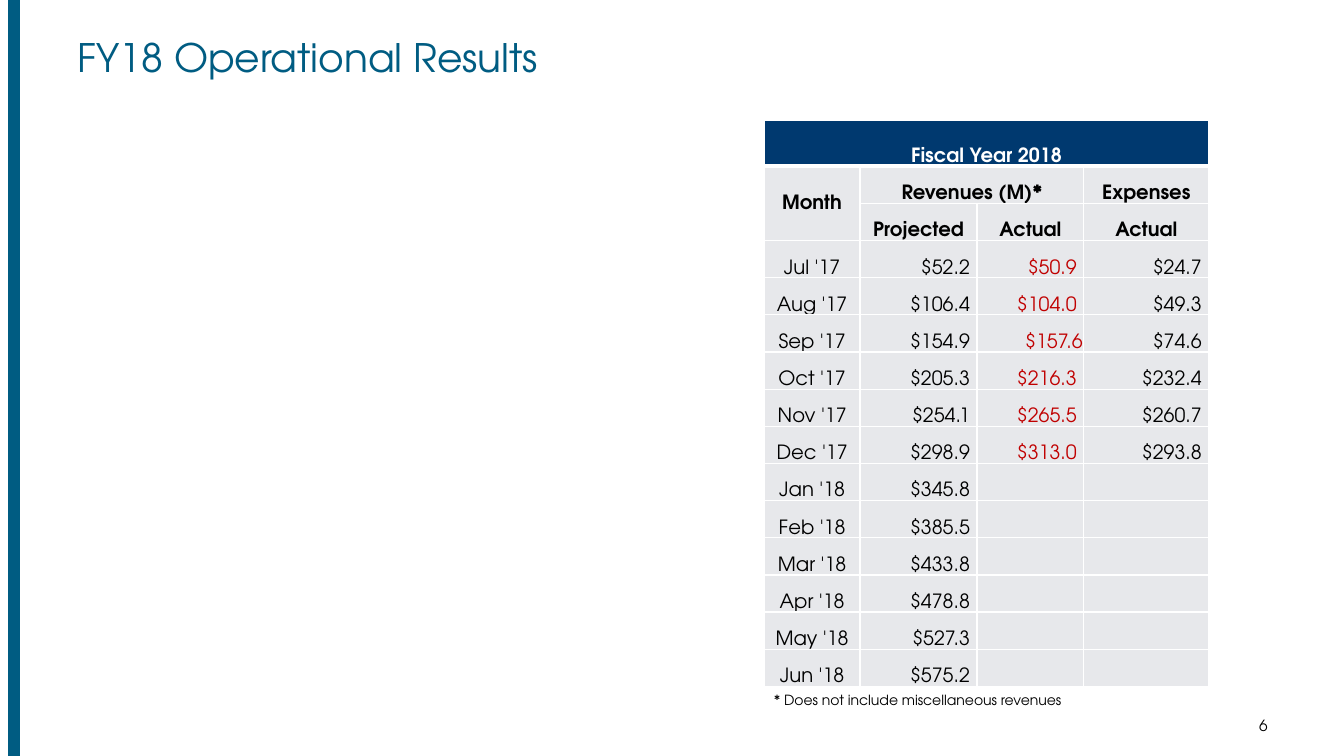
from lxml import etree
from pptx import Presentation
from pptx.dml.color import RGBColor
from pptx.enum.shapes import MSO_CONNECTOR, MSO_SHAPE
from pptx.enum.text import MSO_ANCHOR, PP_ALIGN
from pptx.oxml.ns import qn
from pptx.util import Inches, Pt

LEFT, MID, RIGHT = PP_ALIGN.LEFT, PP_ALIGN.CENTER, PP_ALIGN.RIGHT
MIDDLE, BOTTOM = MSO_ANCHOR.MIDDLE, MSO_ANCHOR.BOTTOM
LINE, RECT = MSO_CONNECTOR.STRAIGHT, MSO_SHAPE.RECTANGLE
TEAL = RGBColor(0x00, 0x5C, 0x82)
NAVY = RGBColor(0x00, 0x39, 0x6F)
PALE = RGBColor(0xE7, 0xE8, 0xEB)
RED = RGBColor(0xC0, 0x00, 0x00)
BLACK = RGBColor(0, 0, 0)
WHITE = RGBColor(0xFF, 0xFF, 0xFF)
FONT = "TeX Gyre Adventor"
WIDE, HIGH = 13.33, 7.5

COLS = [0.95, 1.16, 1.06, 1.24]
HEAD = 0.46  # height of the banner row
EDGE, GAP = 0.01, 0.07  # cell inset, gap right of an amount
HEADS = [
    ["Fiscal Year 2018", "", "", ""],
    ["Month", "Revenues (M)*", "", "Expenses"],
    ["", "Projected", "Actual", "Actual"],
]
MONTHS = [
    ["Jul '17", "$52.2", "$50.9", "$24.7"],
    ["Aug '17", "$106.4", "$104.0", "$49.3"],
    ["Sep '17", "$154.9", "$157.6", "$74.6"],
    ["Oct '17", "$205.3", "$216.3", "$232.4"],
    ["Nov '17", "$254.1", "$265.5", "$260.7"],
    ["Dec '17", "$298.9", "$313.0", "$293.8"],
    ["Jan '18", "$345.8", "", ""],
    ["Feb '18", "$385.5", "", ""],
    ["Mar '18", "$433.8", "", ""],
    ["Apr '18", "$478.8", "", ""],
    ["May '18", "$527.3", "", ""],
    ["Jun '18", "$575.2", "", ""],
]
FLUSH = "$157.6"  # this amount touches the cell's edge


def write(frame, text, size, color=BLACK, bold=False, align=LEFT):
    para = frame.paragraphs[0]
    para.alignment = align
    run = para.add_run()
    run.text = text
    font = run.font
    font.name, font.size, font.bold = FONT, Pt(size), bold
    font.color.rgb = color
    return para


def place(shape, box):
    shape.left, shape.top, shape.width, shape.height = map(Inches, box)


def add_bar(slide, x, high):
    bar = slide.shapes.add_connector(
        LINE, Inches(x), 0, Inches(x), Inches(high))
    bar.line.color.rgb = TEAL
    bar.line.width = Pt(8)
    etree.SubElement(bar._element.spPr, qn("a:effectLst"))


def add_title(slide, box):
    title = slide.shapes.title
    place(title, box)
    frame = title.text_frame
    frame.vertical_anchor = MIDDLE
    write(frame, "FY18 Operational Results", 28, TEAL).line_spacing = 0.9


def add_edges(cell, top, base):
    props = cell._tc.get_or_add_tcPr()
    for side, width in (("L", 1), ("R", 1), ("T", top), ("B", base)):
        edge = etree.SubElement(props, qn("a:ln" + side), w=str(Pt(width)))
        fill = etree.SubElement(edge, qn("a:solidFill"))
        etree.SubElement(fill, qn("a:srgbClr"), val=str(WHITE))


def fill_cell(cell, row, col, text):
    head = row < len(HEADS)
    money = not head and col > 0
    add_edges(cell, 3 if row == 1 else 1, 3 if row == 0 else 1)
    cell.fill.solid()
    cell.fill.fore_color.rgb = PALE if row else NAVY
    cell.margin_left = cell.margin_top = Inches(EDGE)
    cell.margin_right = Inches(GAP if money and text != FLUSH else EDGE)
    cell.margin_bottom = 0
    cell.vertical_anchor = MIDDLE if text == "Month" else BOTTOM
    if text:
        color = WHITE if row == 0 else RED if money and col == 2 else BLACK
        write(cell.text_frame, text, 14, color, head, RIGHT if money else MID)


def add_results(slide, box):
    data = HEADS + MONTHS
    shape = slide.shapes.add_table(
        len(data), len(COLS), *map(Inches, box))
    table = shape.table
    table.first_row = table.horz_banding = False
    for col, width in enumerate(COLS):
        table.columns[col].width = Inches(width)
    step = (box[3] - HEAD) / (len(data) - 1)
    for row, texts in enumerate(data):
        table.rows[row].height = Inches(step if row else HEAD)
        for col, text in enumerate(texts):
            fill_cell(table.cell(row, col), row, col, text)
    # Banner, month and revenue headings
    for start, end in (((0, 0), (0, 3)), ((1, 0), (2, 0)), ((1, 1), (1, 2))):
        table.cell(*start).merge(table.cell(*end))


def add_note(slide, box):
    note = slide.shapes.add_shape(RECT, *map(Inches, box))
    note.shadow.inherit = False
    note.fill.solid()
    note.fill.fore_color.rgb = WHITE
    note.line.fill.background()
    frame = note.text_frame
    frame.word_wrap = True
    write(frame, "* Does not include miscellaneous revenues", 10)


def add_number(slide, box):
    frame = slide.shapes.add_textbox(*map(Inches, box)).text_frame
    frame.word_wrap = True
    frame.vertical_anchor = MIDDLE
    write(frame, "6", 11, align=RIGHT)


def main():
    deck = Presentation()
    deck.slide_width, deck.slide_height = Inches(WIDE), Inches(HIGH)
    slide = deck.slides.add_slide(deck.slide_layouts[5])
    add_number(slide, (10.05, 7.09, 2.62, 0.21))
    add_bar(slide, 0.14, HIGH)
    left, top, high = 7.58, 1.19, 5.62
    add_results(slide, (left, top, sum(COLS), high))
    add_title(slide, (0.67, 0.26, 11.33, 0.66))
    add_note(slide, (left, top + high, 3.09, 0.27))
    deck.save("out.pptx")


if __name__ == "__main__":
    main()
